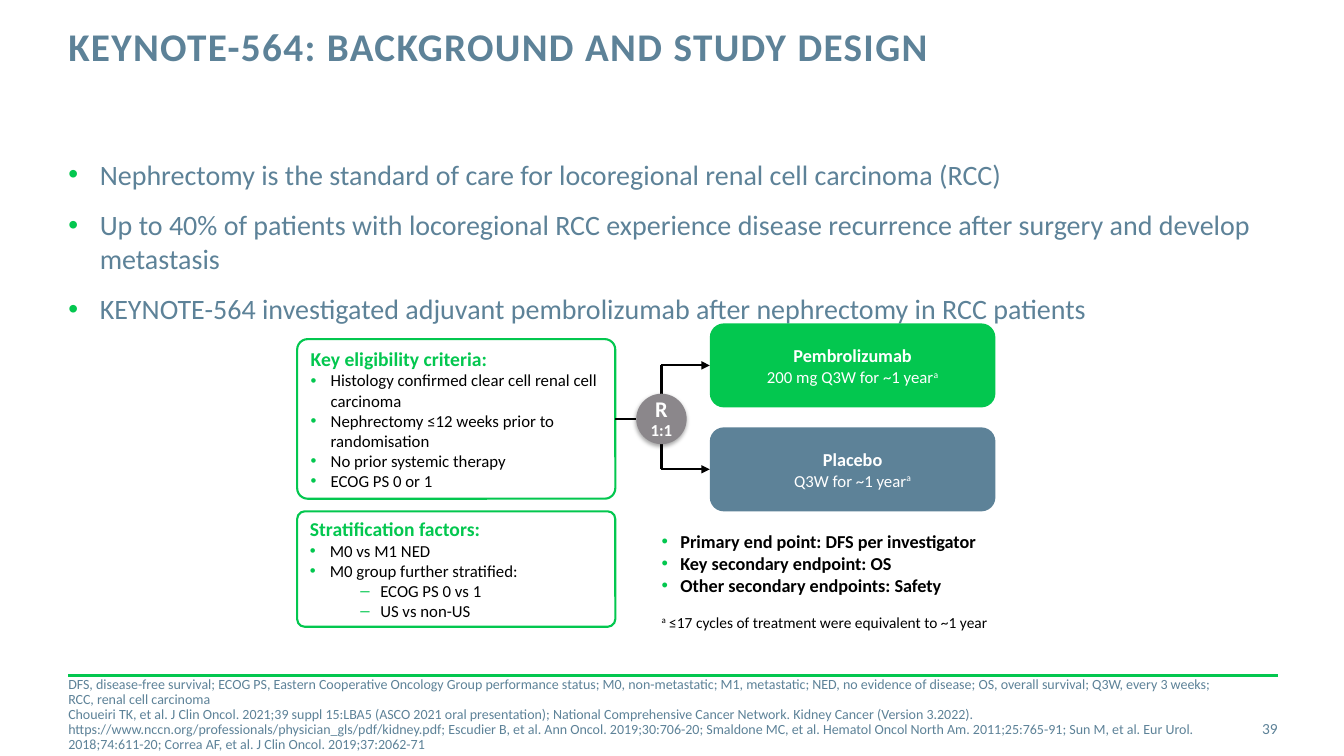
from dataclasses import dataclass

from lxml.etree import SubElement
from pptx import Presentation
from pptx.dml.color import RGBColor
from pptx.enum.shapes import MSO_CONNECTOR, MSO_SHAPE
from pptx.enum.text import MSO_ANCHOR, MSO_AUTO_SIZE, PP_ALIGN
from pptx.oxml.ns import qn
from pptx.util import Pt

PX = 9525


@dataclass(frozen=True)
class Theme:
    font: str = "Calibri"
    green: str = "03C74F"
    slate: str = "5D8298"
    grey: str = "8B878B"
    black: str = "000000"
    white: str = "FFFFFF"
    title: int = 28
    body: int = 20
    ratio: int = 16
    heading: int = 14
    strong: int = 13
    detail: int = 12
    note: int = 11
    reference: int = 10


THEME = Theme()


@dataclass(frozen=True)
class Box:
    left: int
    top: int
    width: int
    height: int

    def at(self, left, top, width, height):
        return Box(self.left + left, self.top + top, width, height)

    def emu(self):
        return [side * PX for side in (self.left, self.top, self.width, self.height)]


@dataclass(frozen=True)
class Row:
    text: str
    size: int
    colour: str
    bold: bool = False
    bullet: str = ""
    margin: int = 0
    hang: int = 0
    level: int = 0


def set_bullet(para, row):
    properties = para._p.get_or_add_pPr()
    properties.set("marL", str(row.margin * PX))
    properties.set("indent", str(-row.hang * PX))
    if row.bullet:
        colour = SubElement(properties, qn("a:buClr"))
        SubElement(colour, qn("a:srgbClr"), val=THEME.green)
        SubElement(properties, qn("a:buFont"), typeface="Arial")
        SubElement(properties, qn("a:buChar"), char=row.bullet)
    else:
        SubElement(properties, qn("a:buNone"))


def write(shape, rows, align=PP_ALIGN.LEFT, anchor=MSO_ANCHOR.TOP,
          insets=(0, 0), gap=0, spacing=1.0, wrap=True):
    frame = shape.text_frame
    frame.word_wrap = wrap
    frame.auto_size = MSO_AUTO_SIZE.NONE
    frame.vertical_anchor = anchor
    frame.margin_left = frame.margin_right = insets[0] * PX
    frame.margin_top = frame.margin_bottom = insets[1] * PX
    for index, row in enumerate(rows):
        para = frame.add_paragraph() if index else frame.paragraphs[0]
        set_bullet(para, row)
        para.level = row.level
        para.alignment = align
        para.space_before = Pt(gap if index else 0)
        para.line_spacing = spacing
        for position, text in enumerate(row.text.split("^")):
            if not text:
                continue
            span = para.add_run()
            span.text = text
            span.font.name = THEME.font
            span.font.size = Pt(row.size)
            span.font.bold = row.bold
            span.font.color.rgb = RGBColor.from_string(row.colour)
            if position % 2:
                span._r.get_or_add_rPr().set("baseline", "30000")


def place(shape, box):
    shape.left, shape.top, shape.width, shape.height = box.emu()
    return shape


def panel(page, kind, box, fill, outline=None, corner=None):
    shape = page.shapes.add_shape(kind, *box.emu())
    shape.shadow.inherit = False
    shape.fill.solid()
    shape.fill.fore_color.rgb = RGBColor.from_string(fill)
    if outline:
        shape.line.color.rgb = RGBColor.from_string(outline)
        shape.line.width = Pt(1.5)
    else:
        shape.line.fill.background()
    if corner:
        shape.adjustments[0] = corner
    return shape


def connect(page, start, end, colour=THEME.black, width=1.5, arrow=False):
    points = [value * PX for value in (*start, *end)]
    line = page.shapes.add_connector(MSO_CONNECTOR.STRAIGHT, *points)
    line.line.color.rgb = RGBColor.from_string(colour)
    line.line.width = Pt(width)
    if arrow:
        SubElement(line.line._get_or_add_ln(), qn("a:tailEnd"), type="triangle")
    SubElement(line._element.spPr, qn("a:effectLst"))
    return line


def add_title(page, box):
    title = place(page.shapes.title, box)
    write(title, [Row("KEYNOTE-564: BACKGROUND AND STUDY DESIGN", THEME.title, THEME.slate, True)],
          spacing=Pt(30))
    title.text_frame.paragraphs[0].runs[0]._r.get_or_add_rPr().set("spc", "100")


def add_background(page, box):
    statements = [
        "Nephrectomy is the standard of care for locoregional renal cell carcinoma (RCC)",
        "Up to 40% of patients with locoregional RCC experience disease recurrence after surgery and develop metastasis",
        "KEYNOTE-564 investigated adjuvant pembrolizumab after nephrectomy in RCC patients",
    ]
    rows = [Row(text, THEME.body, THEME.slate, False, "•", 30, 30) for text in statements]
    write(place(page.placeholders[1], box), rows, gap=12)


def add_footer(page, box):
    right = box.left + box.width
    connect(page, (box.left, box.top), (right, box.top), THEME.green, 2)
    references = [
        "DFS, disease-free survival; ECOG PS, Eastern Cooperative Oncology Group performance status; M0, non-metastatic; M1, metastatic; NED, no evidence of disease; OS, overall survival; Q3W, every 3 weeks; RCC, renal cell carcinoma",
        "Choueiri TK, et al. J Clin Oncol. 2021;39 suppl 15:LBA5 (ASCO 2021 oral presentation); National Comprehensive Cancer Network. Kidney Cancer (Version 3.2022). https://www.nccn.org/professionals/physician_gls/pdf/kidney.pdf; Escudier B, et al. Ann Oncol. 2019;30:706-20; Smaldone MC, et al. Hematol Oncol North Am. 2011;25:765-91; Sun M, et al. Eur Urol. 2018;74:611-20; Correa AF, et al. J Clin Oncol. 2019;37:2062-71",
    ]
    notes = place(page.placeholders[2], box.at(0, 19, 1112, 38))
    write(notes, [Row(text, THEME.reference, THEME.slate) for text in references],
          anchor=MSO_ANCHOR.MIDDLE, spacing=0.9)
    number = page.shapes.add_textbox(*box.at(1069, 32, 83, 38).emu())
    write(number, [Row("39", THEME.note, THEME.slate)], PP_ALIGN.RIGHT, MSO_ANCHOR.MIDDLE)


def add_criteria(page, box, heading, items, subitems=()):
    shape = panel(page, MSO_SHAPE.ROUNDED_RECTANGLE, box, THEME.white, THEME.green, 0.066)
    rows = [Row(heading, THEME.heading, THEME.green, True)]
    rows += [Row(text, THEME.detail, THEME.black, False, "•", 19, 19) for text in items]
    rows += [Row(text, THEME.detail, THEME.black, False, "–", 67, 19, 1) for text in subitems]
    write(shape, rows, anchor=MSO_ANCHOR.MIDDLE, insets=(10, 5))
    return shape


def add_arm(page, box, fill, drug, dose):
    arm = panel(page, MSO_SHAPE.ROUNDED_RECTANGLE, box, fill, corner=0.167)
    rows = [Row(drug, THEME.strong, THEME.white, True), Row(dose, THEME.detail, THEME.white)]
    write(arm, rows, PP_ALIGN.CENTER, MSO_ANCHOR.MIDDLE, (4, 4))
    return arm


def add_randomisation(page, box):
    circle = panel(page, MSO_SHAPE.OVAL, box, THEME.grey)
    effects = circle._element.spPr.find(qn("a:effectLst"))
    shadow = SubElement(effects, qn("a:outerShdw"), blurRad=str(Pt(3.1)), dist=str(Pt(1.8)),
                        dir="5400000", rotWithShape="0")
    colour = SubElement(shadow, qn("a:srgbClr"), val=THEME.black)
    SubElement(colour, qn("a:alpha"), val="35000")
    label = panel(page, MSO_SHAPE.RECTANGLE, box.at(14, 4, 20, 40), THEME.grey)
    rows = [Row("R", THEME.ratio, THEME.white, True), Row("1:1", THEME.detail, THEME.white, True)]
    write(label, rows, PP_ALIGN.CENTER, spacing=0.9, wrap=False)


def add_study_design(page, box):
    criteria = add_criteria(page, box.at(0, 15, 303, 152), "Key eligibility criteria:", [
        "Histology confirmed clear cell renal cell carcinoma",
        "Nephrectomy ≤12 weeks prior to randomisation",
        "No prior systemic therapy", "ECOG PS 0 or 1"])
    add_criteria(page, box.at(0, 179, 303, 110), "Stratification factors:",
                 ["M0 vs M1 NED", "M0 group further stratified:"],
                 ["ECOG PS 0 vs 1", "US vs non-US"])
    spine = box.left + 347
    arms = [(THEME.green, "Pembrolizumab", "200 mg Q3W for ~1 year^a^"),
            (THEME.slate, "Placebo", "Q3W for ~1 year^a^")]
    levels = []
    for index, (fill, drug, dose) in enumerate(arms):
        arm_box = box.at(393, index * 99, 272, 80)
        arm = add_arm(page, arm_box, fill, drug, dose)
        level = arm_box.top + arm_box.height // 2
        connect(page, (spine, level), (arm_box.left, level), arrow=True).end_connect(arm, 1)
        levels.append(level)
    connect(page, (spine, levels[0]), (spine, levels[1]))
    middle = box.top + 91
    connect(page, (box.left + 303, middle), (box.left + 323, middle)).begin_connect(criteria, 3)
    add_randomisation(page, box.at(323, 67, 48, 48))
    endpoints = ["Primary end point: DFS per investigator", "Key secondary endpoint: OS",
                 "Other secondary endpoints: Safety"]
    write(page.shapes.add_textbox(*box.at(347, 197, 311, 63).emu()),
          [Row(text, THEME.strong, THEME.black, True, "•", 18, 18) for text in endpoints])
    write(page.shapes.add_textbox(*box.at(347, 276, 326, 18).emu()),
          [Row("^a^ ≤17 cycles of treatment were equivalent to ~1 year", THEME.note, THEME.black)])


def main():
    deck = Presentation()
    deck.slide_width, deck.slide_height = 1280 * PX, 720 * PX
    page = deck.slides.add_slide(deck.slide_layouts[3])
    add_title(page, Box(65, 26, 918, 84))
    add_background(page, Box(65, 150, 1151, 475))
    add_footer(page, Box(65, 643, 1152, 77))
    add_study_design(page, Box(283, 308, 680, 295))
    deck.save("out.pptx")


if __name__ == "__main__":
    main()
